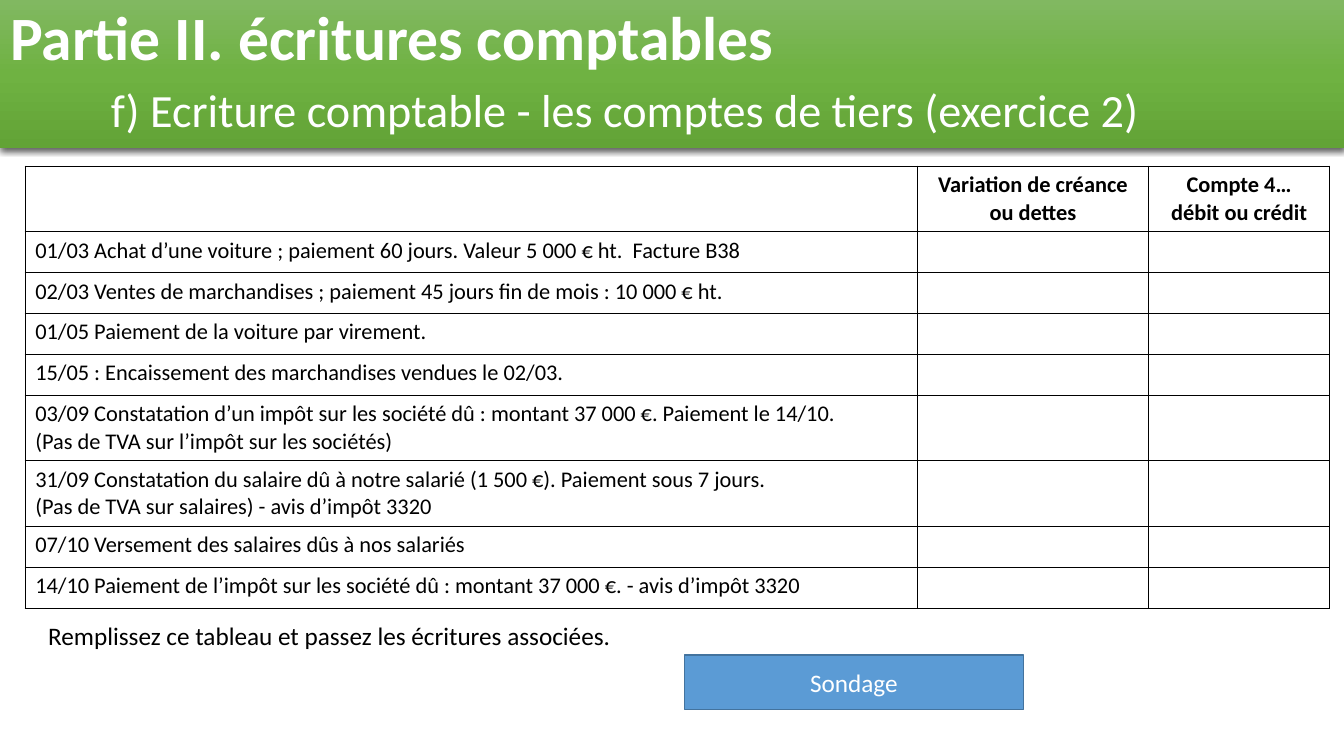
from dataclasses import dataclass
from typing import Any

from lxml import etree
from pptx import Presentation
from pptx.dml.color import RGBColor
from pptx.enum import shapes, text
from pptx.oxml import ns
from pptx.util import Inches, Pt

FONT = "Calibri"
BLACK, WHITE = "000000", "FFFFFF"
LEFT, CENTER = text.PP_ALIGN.LEFT, text.PP_ALIGN.CENTER
STOPS = {0: "81B861", 50: "6FB242", 100: "62A336"}
WIDTHS = (8.85, 2.29, 1.8)


@dataclass
class Row:
    cells: tuple[str, ...]
    tall: bool = False
    head: bool = False


ROWS = [
    Row(("", "Variation de créance ou dettes", "Compte 4…\ndébit ou crédit"), True, True),
    Row(("01/03 Achat d’une voiture ; paiement 60 jours. Valeur 5 000 € ht.  Facture B38",)),
    Row(("02/03 Ventes de marchandises ; paiement 45 jours fin de mois : 10 000 € ht.",)),
    Row(("01/05 Paiement de la voiture par virement.",)),
    Row(("15/05 : Encaissement des marchandises vendues le 02/03.",)),
    Row(("03/09 Constatation d’un impôt sur les société dû : montant 37 000 €. "
         "Paiement le 14/10.\n(Pas de TVA sur l’impôt sur les sociétés)",), True),
    Row(("31/09 Constatation du salaire dû à notre salarié (1 500 €). "
         "Paiement sous 7 jours.\n(Pas de TVA sur salaires) - avis d’impôt 3320",), True),
    Row(("07/10 Versement des salaires dûs à nos salariés",)),
    Row(("14/10 Paiement de l’impôt sur les société dû : montant 37 000 €. - avis d’impôt 3320",)),
]


def rgb(code: str) -> RGBColor:
    return RGBColor.from_string(code)


def box(left: float, top: float, width: float, height: float) -> dict[str, Any]:
    sides = {"left": left, "top": top, "width": width, "height": height}
    return {name: Inches(size) for name, size in sides.items()}


def put(item: Any, values: dict[str, Any]) -> None:
    """Set each attribute named in values."""
    for name, value in values.items():
        setattr(item, name, value)


def style(run: Any, size: float, color: str = BLACK, bold: bool = False) -> None:
    put(run.font, {"name": FONT, "size": Pt(size), "bold": bold})
    run.font.color.rgb = rgb(color)


def write(frame: Any, words: str, size: float, color: str = BLACK,
          bold: bool = False, align: Any = LEFT) -> None:
    frame.text = words
    for para in frame.paragraphs:
        para.alignment = align
        for run in para.runs:
            style(run, size, color, bold)


def add_xml(parent: Any, body: str) -> None:
    """Append DrawingML elements to parent."""
    root = etree.fromstring(f'<r xmlns:a="{ns.nsdecls("a").split(chr(34))[1]}">{body}</r>')
    for node in list(root):
        parent.append(node)


def add_title(slide: Any) -> None:
    title = slide.shapes.title
    put(title, box(0, 0, 13.33, 1.47))
    stops = "".join(f'<a:gs pos="{pos * 1000}"><a:srgbClr val="{code}"/></a:gs>'
                    for pos, code in STOPS.items())
    add_xml(title._element.spPr, f'''
        <a:prstGeom prst="rect"><a:avLst/></a:prstGeom>
        <a:gradFill><a:gsLst>{stops}</a:gsLst><a:lin ang="5400000" scaled="0"/></a:gradFill>
        <a:effectLst><a:outerShdw blurRad="57150" dist="19050" dir="5400000" algn="ctr"
          rotWithShape="0"><a:srgbClr val="{BLACK}"><a:alpha val="63000"/></a:srgbClr>
        </a:outerShdw></a:effectLst>''')
    put(title.text_frame, {"word_wrap": True, "auto_size": text.MSO_AUTO_SIZE.NONE,
                           "vertical_anchor": text.MSO_ANCHOR.MIDDLE})
    para = title.text_frame.paragraphs[0]
    put(para, {"alignment": LEFT, "line_spacing": 0.9})
    para._p.get_or_add_pPr().set("defTabSz", str(Inches(1)))
    parts = (("Partie II. écritures comptables", 44, True), ("\t", 44, True),
             ("f) Ecriture comptable - les comptes de tiers (exercice 2)", 33, False))
    for words, size, bold in parts:
        if words == "\t":
            para.add_line_break()
        run = para.add_run()
        run.text = words
        style(run, size, WHITE, bold)


def add_grid(slide: Any) -> None:
    place = box(0.25, 1.65, sum(WIDTHS), 4.35)
    table = slide.shapes.add_table(len(ROWS), len(WIDTHS), **place).table
    put(table, {"first_row": False, "horz_banding": False})
    for col, width in zip(table.columns, WIDTHS):
        col.width = Inches(width)
    edges = "".join(f'<a:ln{side} w="12700"><a:solidFill><a:srgbClr val="{BLACK}"/>'
                    f'</a:solidFill></a:ln{side}>' for side in "LRTB")
    for line, row in zip(table.rows, ROWS):
        line.height = Inches(0.65 if row.tall else 0.4)
        for cell in line.cells:
            add_xml(cell._tc.get_or_add_tcPr(), edges)
            cell.fill.background()
        for cell, words in zip(line.cells, row.cells):
            if words:
                write(cell.text_frame, words, 16, bold=row.head,
                      align=CENTER if row.head else LEFT)


def add_note(slide: Any) -> None:
    frame = slide.shapes.add_textbox(**box(0.38, 6.1, 12.81, 0.4)).text_frame
    frame.word_wrap = True
    write(frame, "Remplissez ce tableau et passez les écritures associées.", 18)


def add_button(slide: Any) -> None:
    button = slide.shapes.add_shape(shapes.MSO_SHAPE.RECTANGLE, **box(6.79, 6.5, 3.36, 0.54))
    button.shadow.inherit = False
    button.fill.solid()
    button.fill.fore_color.rgb = rgb("5B9BD5")
    button.line.color.rgb = rgb("43739E")
    button.line.width = Pt(1)
    button.text_frame.vertical_anchor = text.MSO_ANCHOR.MIDDLE
    write(button.text_frame, "Sondage", 18, WHITE, align=CENTER)


def main() -> None:
    deck = Presentation()
    put(deck, {"slide_width": Inches(13.33), "slide_height": Inches(7.5)})
    slide = deck.slides.add_slide(deck.slide_layouts[5])
    for draw in (add_title, add_grid, add_note, add_button):
        draw(slide)
    deck.save("out.pptx")


if __name__ == "__main__":
    main()
